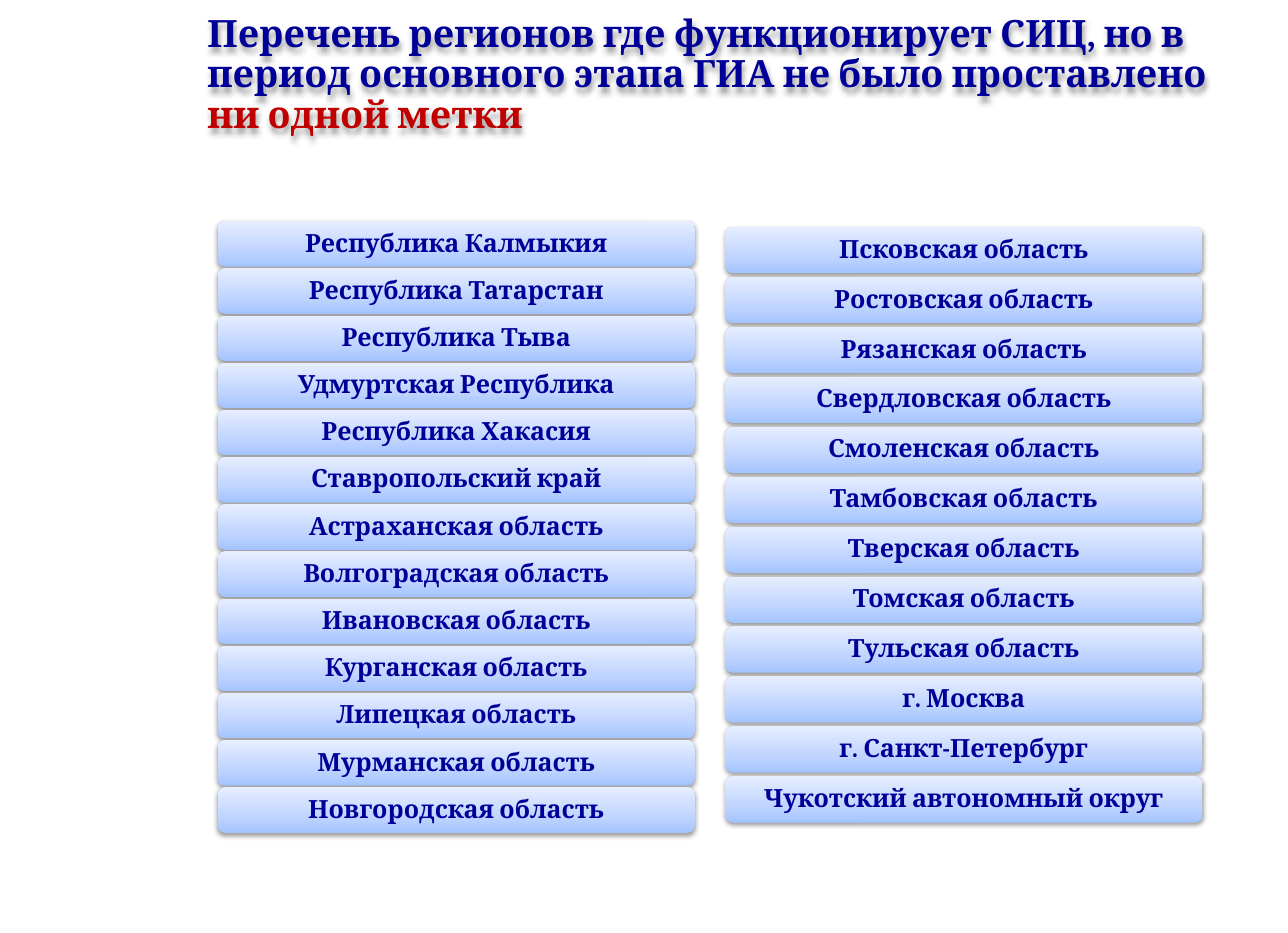
from dataclasses import dataclass

from lxml import etree
from pptx import Presentation
from pptx.dml.color import RGBColor
from pptx.enum.shapes import MSO_SHAPE
from pptx.enum.text import MSO_ANCHOR, PP_ALIGN
from pptx.oxml.ns import qn
from pptx.util import Pt


@dataclass(frozen=True)
class Theme:
    font: str = "Cambria"
    navy: str = "000099"
    red: str = "C00000"
    shadow: str = "000000"
    gradient: tuple = ((0, "A4C4FF"), (35, "BFD4FF"), (100, "E6EEFF"))
    title_size: float = 24
    region_size: float = 16


THEME = Theme()

TITLE = (
    ("Перечень регионов где функционирует СИЦ, но в период основного этапа "
     "ГИА не было проставлено ", THEME.navy),
    ("ни одной метки", THEME.red),
)
LEFT_REGIONS = (
    "Республика Калмыкия", "Республика Татарстан", "Республика Тыва",
    "Удмуртская Республика", "Республика Хакасия", "Ставропольский край",
    "Астраханская область", "Волгоградская область", "Ивановская область",
    "Курганская область", "Липецкая область", "Мурманская область",
    "Новгородская область",
)
RIGHT_REGIONS = (
    "Псковская область", "Ростовская область", "Рязанская область",
    "Свердловская область", "Смоленская область", "Тамбовская область",
    "Тверская область", "Томская область", "Тульская область",
    "г. Москва", "г. Санкт-Петербург", "Чукотский автономный округ",
)


def add_color(parent, color):
    return etree.SubElement(parent, qn("a:srgbClr"), val=color)


def set_gradient(shape):
    """Fill from bottom to top with the theme gradient."""
    gradient = etree.Element(qn("a:gradFill"), rotWithShape="1")
    stops = etree.SubElement(gradient, qn("a:gsLst"))
    for position, color in THEME.gradient:
        add_color(etree.SubElement(stops, qn("a:gs"), pos=str(position * 1000)), color)
    etree.SubElement(gradient, qn("a:lin"), ang="16200000", scaled="1")
    shape._element.spPr.find(qn("a:prstGeom")).addnext(gradient)


def set_shadow(shape, blur, distance, opacity):
    """Cast a soft shadow straight down."""
    shape.shadow.inherit = False
    effects = shape._element.spPr.find(qn("a:effectLst"))
    shadow = etree.SubElement(
        effects, qn("a:outerShdw"), blurRad=str(Pt(blur)), dist=str(Pt(distance)),
        dir="5400000", rotWithShape="0")
    etree.SubElement(add_color(shadow, THEME.shadow), qn("a:alpha"), val=str(opacity * 1000))


def add_span(para, text, size, color):
    span = para.add_run()
    span.text = text
    span.font.name = THEME.font
    span.font.size = Pt(size)
    span.font.bold = True
    span.font.color.rgb = RGBColor.from_string(color)


def set_frame(shape, horizontal, vertical, alignment):
    """Prepare the text frame and return its first paragraph."""
    frame = shape.text_frame
    frame.word_wrap = True
    frame.vertical_anchor = MSO_ANCHOR.MIDDLE
    frame.margin_left = frame.margin_right = Pt(horizontal)
    frame.margin_top = frame.margin_bottom = Pt(vertical)
    para = frame.paragraphs[0]
    para.alignment = alignment
    para.line_spacing = 0.9
    return para


def add_title(page):
    box = page.shapes.add_textbox(Pt(126), Pt(1.5), Pt(688.3), Pt(93.6))
    set_shadow(box, blur=4, distance=3, opacity=40)
    para = set_frame(box, 6.5, 3.6, PP_ALIGN.LEFT)
    for text, color in TITLE:
        add_span(para, text, THEME.title_size, color)


def add_region(group, name, left, top, height):
    bar = group.shapes.add_shape(
        MSO_SHAPE.ROUNDED_RECTANGLE, Pt(left), Pt(top), Pt(304.6), Pt(height))
    set_gradient(bar)
    bar.line.fill.background()
    set_shadow(bar, blur=3.1, distance=1.6, opacity=38)
    para = set_frame(bar, 5, 5, PP_ALIGN.CENTER)
    add_span(para, name, THEME.region_size, THEME.navy)


def add_column(page, regions, left, top, height, pitch):
    group = page.shapes.add_group_shape()
    for row, name in enumerate(regions):
        add_region(group, name, left, top + row * pitch, height)


def main():
    deck = Presentation()
    deck.slide_width, deck.slide_height = Pt(822.25), Pt(595.45)
    page = deck.slides.add_slide(deck.slide_layouts[6])

    # Heading
    add_title(page)

    # Two columns of regions
    add_column(page, LEFT_REGIONS, left=139, top=141.2, height=29, pitch=30.11)
    add_column(page, RIGHT_REGIONS, left=463, top=144.8, height=29.5, pitch=31.88)

    deck.save("out.pptx")


if __name__ == "__main__":
    main()
